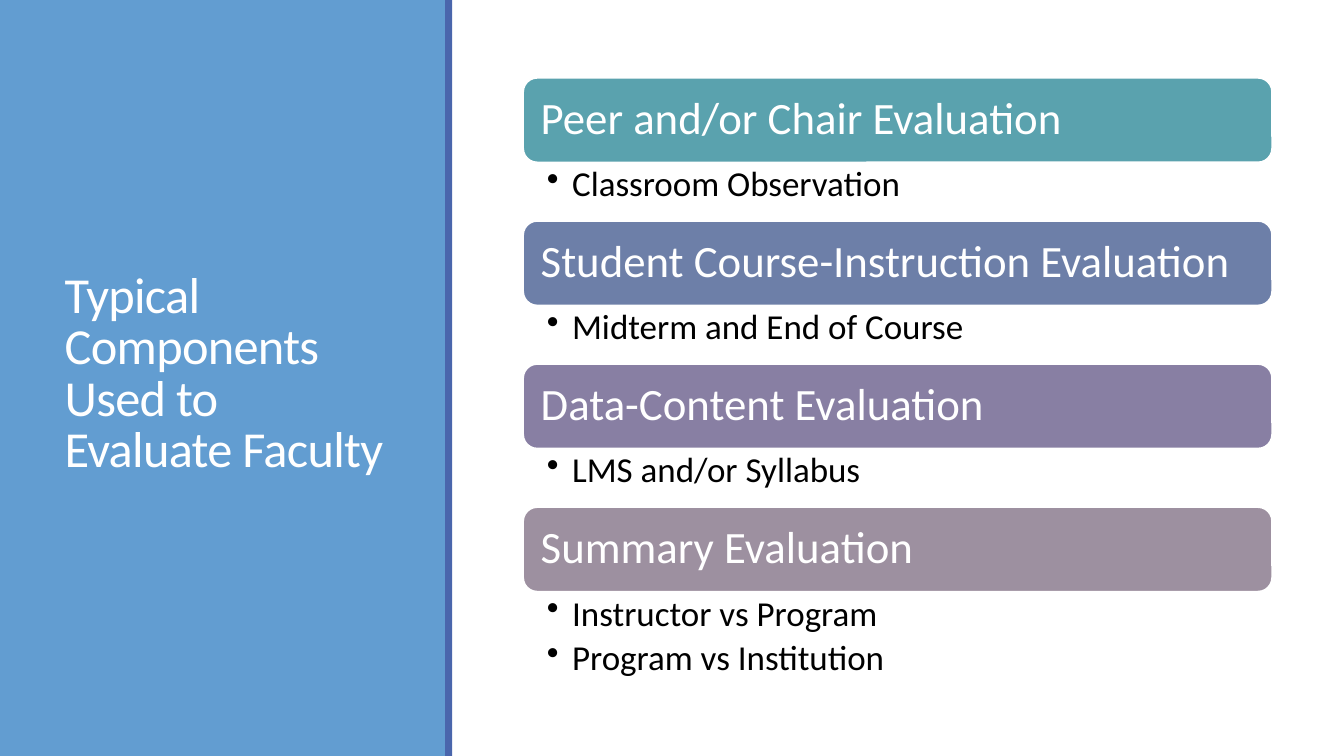
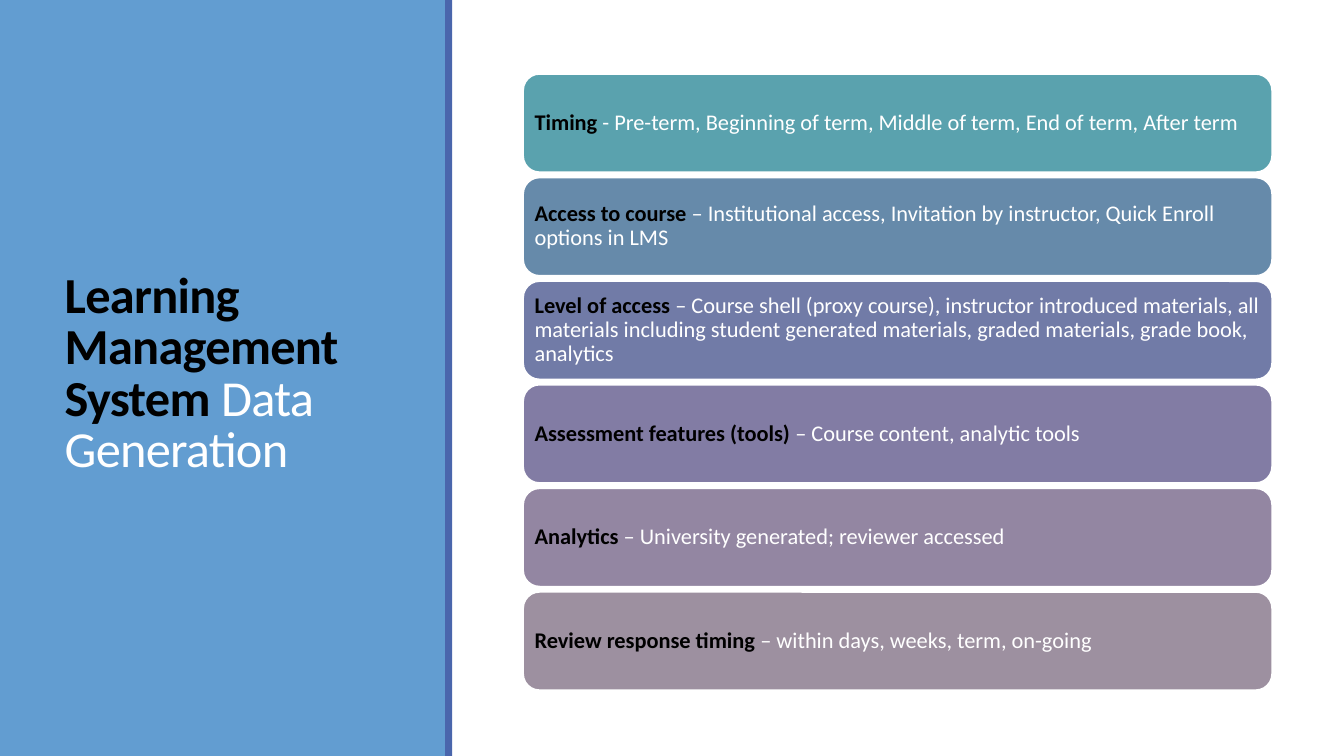
import pptx
import pptx.dml.color
import pptx.enum.shapes
import pptx.enum.text
import pptx.util
from lxml import etree

Pt = pptx.util.Pt
ANCHOR = pptx.enum.text.MSO_ANCHOR
SHAPE = pptx.enum.shapes.MSO_SHAPE

# Shared look
FONT = "Calibri"
WHITE, BLACK, PANEL, STRIPE = "FFFFFF", "000000", "629DD1", "4A66AC"
CARD_LEFT, CARD_WIDTH = 373.7, 535


def color(hex_code):
    return pptx.dml.color.RGBColor.from_string(hex_code)


def add_spans(para, spans, size, spacing):
    """Add (text, colour, bold) runs; a newline stands for a line break."""
    para.alignment = pptx.enum.text.PP_ALIGN.LEFT
    para.line_spacing = spacing
    for text, hex_code, bold in spans:
        if text == "\n":
            para.add_line_break()
            continue
        span = para.add_run()
        span.text = text
        span.font.name = FONT
        span.font.size = Pt(size)
        span.font.bold = bold
        span.font.color.rgb = color(hex_code)


# Content
components = [
    ("Peer and/or Chair Evaluation", "5AA2AE", ["Classroom Observation"]),
    ("Student Course-Instruction Evaluation", "6D7FA8", ["Midterm and End of Course"]),
    ("Data-Content Evaluation", "887FA3", ["LMS and/or Syllabus"]),
    ("Summary Evaluation", "9D90A0", ["Instructor vs Program", "Program vs Institution"]),
]
data_sources = [
    ("Timing", " - Pre-term, Beginning of term, Middle of term, End of term, After term", "5AA2AE"),
    ("Access to course ", "– Institutional access, Invitation by instructor, "
     "Quick Enroll options in LMS", "668AAA"),
    ("Level of access ", "– Course shell (proxy course), instructor introduced materials, "
     "all materials including student generated materials, graded materials, "
     "grade book, analytics", "717BA7"),
    ("Assessment features (tools) ", "– Course content, analytic tools", "827CA4"),
    ("Analytics", " – University generated; reviewer accessed", "9386A2"),
    ("Review response timing ", "– within days, weeks, term, on-going", "9D90A0"),
]
slides = [
    {
        "title": [("Typical Components", WHITE, False), ("\n", WHITE, False),
                  ("Used to Evaluate Faculty", WHITE, False)],
        "cards": [([(name, WHITE, False)], fill, bullets)
                  for name, fill, bullets in components],
        "top": 55.6, "height": 60.4, "pitch": 102.2, "size": 32, "inset": 9.6,
    },
    {
        "title": [("Learning Management System ", BLACK, True),
                  ("Data Generation", WHITE, False)],
        "cards": [([(name, BLACK, True), (detail, WHITE, False)], fill, [])
                  for name, detail, fill in data_sources],
        "top": 52.8, "height": 70.2, "pitch": 74, "size": 16, "inset": 4.8,
    },
]

deck = pptx.Presentation()
deck.slide_width, deck.slide_height = Pt(960), Pt(540)

for content in slides:
    page = deck.slides.add_slide(deck.slide_layouts[5])

    # Side panel and stripe
    for left, width, fill in [(0, 319, PANEL), (318, 5, STRIPE)]:
        band = page.shapes.add_shape(SHAPE.RECTANGLE, Pt(left), 0, Pt(width), Pt(540))
        band.shadow.inherit = False
        band.fill.solid()
        band.fill.fore_color.rgb = color(fill)
        band.line.fill.background()

    # Title, raised above the panel
    title = page.shapes.title
    page.shapes._spTree.append(title._element)
    title.left, title.top, title.width, title.height = Pt(39), Pt(41), Pt(243), Pt(454)
    frame = title.text_frame
    frame.word_wrap = True
    frame.auto_size = pptx.enum.text.MSO_AUTO_SIZE.NONE
    frame.vertical_anchor = ANCHOR.MIDDLE
    add_spans(frame.paragraphs[0], content["title"], 36, 0.85)
    for span in frame.paragraphs[0].runs:
        span._r.get_or_add_rPr().set("spc", "-50")

    # Cards at an even pitch
    for index, (spans, fill, bullets) in enumerate(content["cards"]):
        top = content["top"] + index * content["pitch"]
        card = page.shapes.add_shape(SHAPE.ROUNDED_RECTANGLE, Pt(CARD_LEFT), Pt(top),
                                     Pt(CARD_WIDTH), Pt(content["height"]))
        card.shadow.inherit = False
        card.fill.solid()
        card.fill.fore_color.rgb = color(fill)
        card.line.color.rgb = color(WHITE)
        card.line.width = Pt(1.25)
        frame = card.text_frame
        frame.word_wrap = True
        frame.vertical_anchor = ANCHOR.MIDDLE
        frame.margin_left = frame.margin_right = Pt(content["inset"])
        frame.margin_top = frame.margin_bottom = Pt(content["inset"])
        add_spans(frame.paragraphs[0], spans, content["size"], 0.9)
        if not bullets:
            continue

        # Bullets under the card
        box = page.shapes.add_textbox(Pt(CARD_LEFT), Pt(top + content["height"]),
                                      Pt(CARD_WIDTH), Pt(9 + 32.5 * len(bullets)))
        frame = box.text_frame
        frame.word_wrap = True
        frame.margin_left, frame.margin_right = Pt(17), Pt(18)
        frame.margin_top = frame.margin_bottom = Pt(3)
        for number, text in enumerate(bullets):
            para = frame.add_paragraph() if number else frame.paragraphs[0]
            properties = para._p.get_or_add_pPr()
            properties.set("marL", str(Pt(18)))
            properties.set("indent", str(-Pt(18)))
            bullet = etree.SubElement(properties, pptx.oxml.ns.qn("a:buChar"))
            bullet.set("char", "•")
            para.space_after = Pt(5)
            add_spans(para, [(text, BLACK, False)], 25, 0.9)

deck.save("out.pptx")
